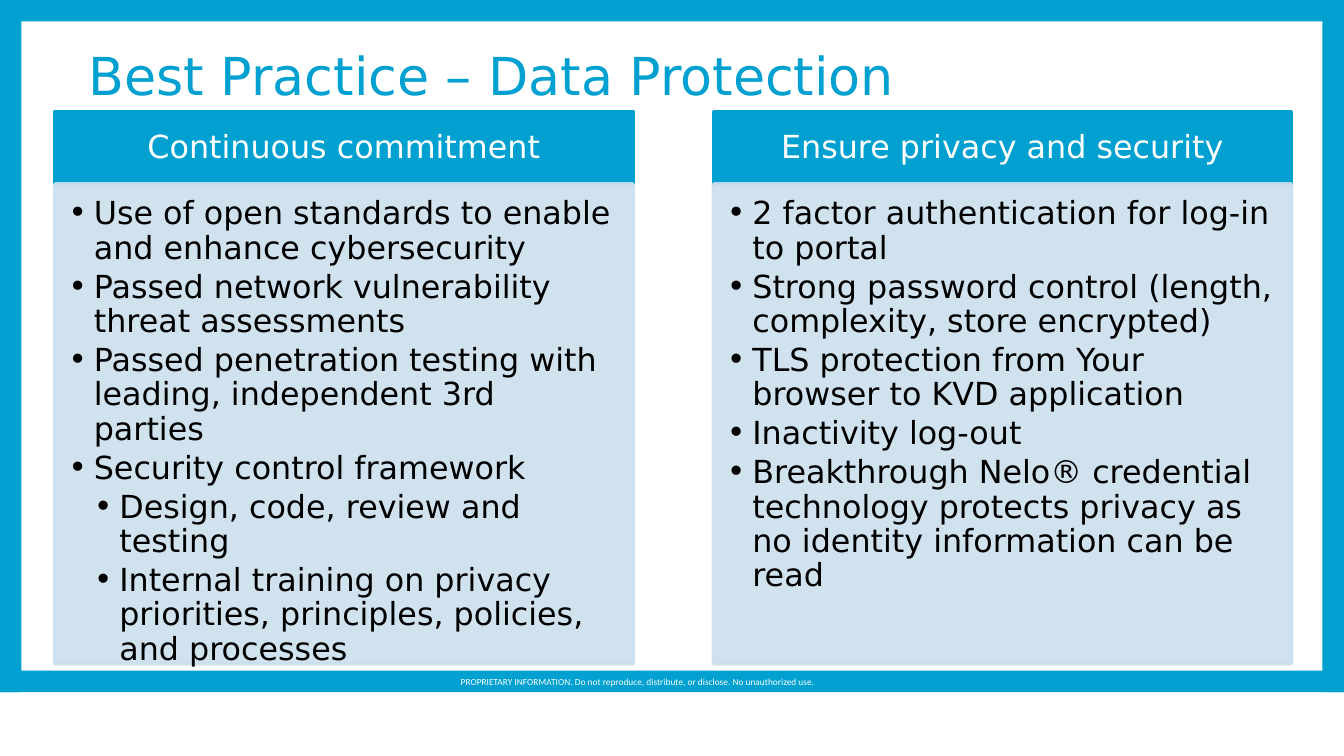
from dataclasses import dataclass

from lxml.etree import SubElement
from pptx import Presentation
from pptx.dml.color import RGBColor
from pptx.enum.shapes import MSO_SHAPE
from pptx.enum.text import MSO_ANCHOR, MSO_AUTO_SIZE, PP_ALIGN
from pptx.oxml.ns import qn
from pptx.util import Inches, Pt

COLORS = {"brand": "00A0D0", "panel": "CCDFEE", "text": "000000", "white": "FFFFFF"}
FONT = "DejaVu Sans"
SLIDE_W = 10
SLIDE_H = SLIDE_W * 9 / 16
FRAME_H, BORDER = 5.15, 0.16
COLUMN_W, COLUMN_LEFT, COLUMN_STEP = 4.3, 0.41, 4.9
HEADER_TOP, HEADER_H, BODY_H = 0.83, 0.54, 3.57
INDENT = 0.19
TEXT_SIZE = 17


@dataclass
class Bullet:
    text: str
    level: int = 1


@dataclass
class Column:
    heading: str
    bullets: list[Bullet]


COLUMNS = [
    Column("Continuous commitment", [
        Bullet("Use of open standards to enable and enhance cybersecurity"),
        Bullet("Passed network vulnerability threat assessments"),
        Bullet("Passed penetration testing with leading, independent 3rd parties"),
        Bullet("Security control framework"),
        Bullet("Design, code, review and testing", 2),
        Bullet("Internal training on privacy priorities, principles, policies, "
               "and processes", 2),
    ]),
    Column("Ensure privacy and security", [
        Bullet("2 factor authentication for log-in to portal"),
        Bullet("Strong password control (length, complexity, store encrypted)"),
        Bullet("TLS protection from Your browser to KVD application"),
        Bullet("Inactivity log-out"),
        Bullet("Breakthrough Nelo® credential technology protects privacy as "
               "no identity information can be read"),
    ]),
]


def style_font(paragraph, size: float, color: str, name: str = FONT) -> None:
    paragraph.font.size = Pt(size)
    paragraph.font.name = name
    paragraph.font.color.rgb = RGBColor.from_string(COLORS[color])


def set_insets(frame, left: float, top: float, right: float, bottom: float) -> None:
    frame.margin_left, frame.margin_top = Inches(left), Inches(top)
    frame.margin_right, frame.margin_bottom = Inches(right), Inches(bottom)


def add_box(slide, left: float, top: float, width: float, height: float,
            color: str, outlined: bool = False, opacity: int = 100):
    box = slide.shapes.add_shape(MSO_SHAPE.RECTANGLE, Inches(left), Inches(top),
                                 Inches(width), Inches(height))
    box.shadow.inherit = False
    box.fill.solid()
    box.fill.fore_color.rgb = RGBColor.from_string(COLORS[color])
    if outlined:
        box.line.color.rgb = RGBColor.from_string(COLORS[color])
        box.line.width = Pt(2)
    else:
        box.line.fill.background()
    if opacity < 100:
        for tint in box._element.spPr.iter(qn("a:srgbClr")):
            SubElement(tint, qn("a:alpha"), val=str(opacity * 1000))
    return box


def add_bullet(paragraph, bullet: Bullet) -> None:
    paragraph.text = bullet.text
    paragraph.level = bullet.level
    paragraph.alignment = PP_ALIGN.LEFT
    properties = paragraph._p.get_or_add_pPr()
    properties.set("marL", str(Inches(INDENT * bullet.level)))
    properties.set("indent", str(Inches(-INDENT)))
    SubElement(properties, qn("a:buFont"), typeface=FONT)
    SubElement(properties, qn("a:buChar"), char="•")
    paragraph.line_spacing = 0.9
    paragraph.space_after = Pt(TEXT_SIZE * 0.15)
    style_font(paragraph, TEXT_SIZE, "text")


def add_column(slide, left: float, column: Column) -> None:
    header = add_box(slide, left, HEADER_TOP, COLUMN_W, HEADER_H, "brand", outlined=True)
    frame = header.text_frame
    frame.word_wrap = True
    frame.vertical_anchor = MSO_ANCHOR.MIDDLE
    set_insets(frame, 0.13, 0.08, 0.13, 0.08)
    heading = frame.paragraphs[0]
    heading.text = column.heading
    heading.alignment = PP_ALIGN.CENTER
    heading.line_spacing = 0.9
    style_font(heading, TEXT_SIZE, "white")

    panel = add_box(slide, left, HEADER_TOP + HEADER_H, COLUMN_W, BODY_H, "panel",
                    outlined=True, opacity=90)
    frame = panel.text_frame
    frame.word_wrap = True
    frame.vertical_anchor = MSO_ANCHOR.TOP
    set_insets(frame, 0.1, 0.1, 0.13, 0.15)
    for index, bullet in enumerate(column.bullets):
        add_bullet(frame.add_paragraph() if index else frame.paragraphs[0], bullet)


def add_title(slide, text: str) -> None:
    title = slide.shapes.title
    title.left, title.top = Inches(0.66), Inches(0.32)
    title.width, title.height = Inches(8.66), Inches(0.74)
    frame = title.text_frame
    frame.auto_size = MSO_AUTO_SIZE.NONE
    frame.vertical_anchor = MSO_ANCHOR.TOP
    set_insets(frame, 0, 0, 0, 0)
    paragraph = frame.paragraphs[0]
    paragraph.text = text
    paragraph.alignment = PP_ALIGN.LEFT
    style_font(paragraph, 28, "brand")


def add_footer(slide, text: str) -> None:
    footer = slide.shapes.add_textbox(Inches(3.33), Inches(4.98), Inches(3.33), Inches(0.19))
    footer.text_frame.word_wrap = True
    paragraph = footer.text_frame.paragraphs[0]
    paragraph.text = text
    style_font(paragraph, 5, "white", "Calibri")


def main() -> None:
    presentation = Presentation()
    presentation.slide_width = Inches(SLIDE_W)
    presentation.slide_height = Inches(SLIDE_H)
    slide = presentation.slides.add_slide(presentation.slide_layouts[5])

    # Frame: left and right, then top and bottom
    for left in (0, SLIDE_W - BORDER):
        add_box(slide, left, 0, BORDER, FRAME_H, "brand")
    for top in (0, FRAME_H - BORDER):
        add_box(slide, 0, top, SLIDE_W, BORDER, "brand")

    # Title and footer
    add_footer(slide, "PROPRIETARY INFORMATION. Do not reproduce, distribute, "
                      "or disclose. No unauthorized use.")
    add_title(slide, "Best Practice – Data Protection")

    # Two headed columns
    for index, column in enumerate(COLUMNS):
        add_column(slide, COLUMN_LEFT + index * COLUMN_STEP, column)

    presentation.save("out.pptx")


if __name__ == "__main__":
    main()
